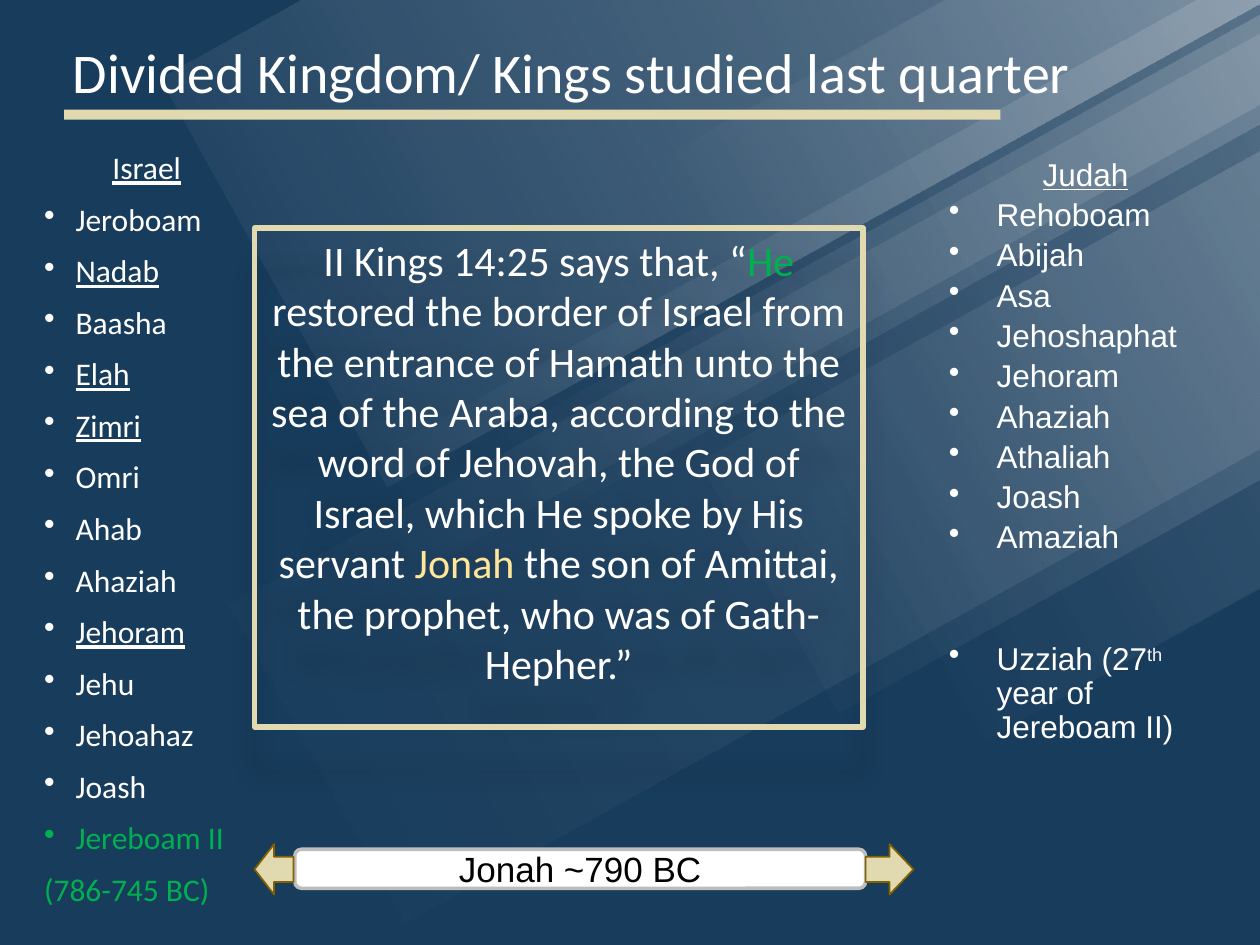
"""Build the Divided Kingdom slide listing the kings of Israel and Judah."""
from dataclasses import dataclass
from typing import Optional

import lxml.etree
import pptx
import pptx.dml.color
import pptx.enum.shapes
import pptx.enum.text
import pptx.oxml.ns
import pptx.util

COLUMNS, ROWS = 100, 75
CELL = pptx.util.Inches(0.1)
WHITE, BLACK, NAVY = "FFFFFF", "000000", "183C5C"
SAND, BRONZE, SILVER = "E1DAB1", "806000", "BDBDBD"
GREEN, YELLOW = "00B050", "FFE699"
SHAPE = pptx.enum.shapes.MSO_SHAPE
ALIGN = pptx.enum.text.PP_ALIGN
ANCHOR = pptx.enum.text.MSO_ANCHOR


@dataclass(frozen=True)
class Area:
    """A rectangle in grid columns and rows."""
    column: float
    row: float
    width: float
    height: float

    def lengths(self) -> list:
        """Return left, top, width and height as slide lengths."""
        cells = (self.column, self.row, self.width, self.height)
        return [round(cell * CELL) for cell in cells]


@dataclass(frozen=True)
class Beam:
    """A slanted ray of light that fades out along its length."""
    area: Area
    opacity: int
    fade_end: float = 1.0


@dataclass(frozen=True)
class Span:
    """A stretch of text with its own marks."""
    text: str
    color: Optional[str] = None
    raised: bool = False


@dataclass(frozen=True)
class Style:
    """Font and spacing shared by the paragraphs of a box."""
    font: str
    size: float
    color: str = WHITE
    align: int = ALIGN.LEFT
    line_spacing: float = 1.0
    space_before: float = 0
    indent: float = 0


@dataclass(frozen=True)
class Entry:
    """A paragraph, with what sets it apart from its box."""
    spans: tuple
    color: Optional[str] = None
    underline: bool = False
    heading: bool = False
    bullet: bool = True
    space_before: Optional[float] = None


BEAMS = (
    Beam(Area(48.2, -54, 37.1, 102.9), 47),
    Beam(Area(62.8, -7, 53, 58.8), 26, 0.77),
    Beam(Area(65.5, -25.6, 9.7, 89.6), 17),
    Beam(Area(55.7, -15.8, 28.8, 102.9), 14),
    Beam(Area(88.8, -19.9, 22.8, 89.6), 26),
    Beam(Area(86.2, -44.7, 7.6, 111.4), 28),
)
ISRAEL = ("Jeroboam", "Nadab", "Baasha", "Elah", "Zimri", "Omri", "Ahab",
          "Ahaziah", "Jehoram", "Jehu", "Jehoahaz", "Joash")
UNDERLINED = {"Nadab", "Elah", "Zimri", "Jehoram"}
JUDAH = ("Rehoboam", "Abijah", "Asa", "Jehoshaphat", "Jehoram", "Ahaziah",
         "Athaliah", "Joash", "Amaziah")
VERSE = (
    Span("II Kings 14:25 says that, “"),
    Span("He", GREEN),
    Span(" restored the border of Israel from the entrance of Hamath unto "
         "the sea of the Araba, according to the word of Jehovah, the God of "
         "Israel, which He spoke by His servant "),
    Span("Jonah", YELLOW),
    Span(" the son of Amittai, the prophet, who was of Gath-Hepher.”"),
)


def rgb(color: str) -> pptx.dml.color.RGBColor:
    """Turn a hex string into a colour."""
    return pptx.dml.color.RGBColor.from_string(color)


def add_element(parent, tag: str, **attributes: str):
    """Append a drawing element to its parent."""
    return lxml.etree.SubElement(parent, pptx.oxml.ns.qn(tag), attributes)


def add_shape(page, kind: int, area: Area, fill: Optional[str] = None,
              line: Optional[str] = None, weight: float = 1, turn: float = 0):
    """Add a preset shape without a shadow."""
    shape = page.shapes.add_shape(kind, *area.lengths())
    shape.rotation = turn
    shape.shadow.inherit = False
    if fill:
        shape.fill.solid()
        shape.fill.fore_color.rgb = rgb(fill)
    else:
        shape.fill.background()
    if line:
        shape.line.color.rgb = rgb(line)
        shape.line.width = pptx.util.Pt(weight)
    else:
        shape.line.fill.background()
    return shape


def add_beam(page, beam: Beam) -> None:
    """Add a ray that fades from its top to its foot."""
    shape = add_shape(page, SHAPE.RECTANGLE, beam.area, turn=61)
    shape.fill.gradient()
    shape.fill.gradient_angle = 270
    stops = shape.fill.gradient_stops
    for stop, position in zip(stops, (0, beam.fade_end)):
        stop.position = position
        stop.color.rgb = rgb(WHITE)
    paints = shape._element.spPr.iter(pptx.oxml.ns.qn("a:srgbClr"))
    for paint, opacity in zip(list(paints), (beam.opacity, 0)):
        add_element(paint, "a:alpha", val=str(opacity * 1000))


def add_soft_shadow(shape) -> None:
    """Cast a faint shadow straight down."""
    effects = shape._element.spPr.find(pptx.oxml.ns.qn("a:effectLst"))
    shadow = add_element(effects, "a:outerShdw", blurRad=str(pptx.util.Pt(12)),
                         dist=str(pptx.util.Pt(25)), dir="5400000")
    paint = add_element(shadow, "a:srgbClr", val=BLACK)
    add_element(paint, "a:alpha", val="15000")


def write(shape, entries: list, style: Style, anchor: int = ANCHOR.TOP,
          insets: tuple = (0.1, 0.05)) -> None:
    """Fill a shape with paragraphs."""
    frame = shape.text_frame
    frame.word_wrap = True
    frame.vertical_anchor = anchor
    frame.margin_left = frame.margin_right = pptx.util.Inches(insets[0])
    frame.margin_top = frame.margin_bottom = pptx.util.Inches(insets[1])
    for index, entry in enumerate(entries):
        para = frame.add_paragraph() if index else frame.paragraphs[0]
        before = entry.space_before
        para.space_before = pptx.util.Pt(style.space_before if before is None else before)
        para.line_spacing = style.line_spacing
        para.alignment = ALIGN.CENTER if entry.heading else style.align
        para.font.name = style.font
        para.font.size = pptx.util.Pt(style.size)
        para.font.color.rgb = rgb(entry.color or style.color)
        para.font.underline = entry.underline or entry.heading
        properties = para._p.get_or_add_pPr()
        if style.indent and (entry.bullet or entry.heading):
            indent = pptx.util.Inches(style.indent)
            properties.set("marL", str(indent))
            properties.set("indent", str(-indent))
        if style.indent and entry.bullet and not entry.heading:
            bullet = lxml.etree.Element(pptx.oxml.ns.qn("a:buChar"), char="•")
            properties.find(pptx.oxml.ns.qn("a:defRPr")).addprevious(bullet)
        for span in entry.spans:
            run = para.add_run()
            run.text = span.text
            if span.color:
                run.font.color.rgb = rgb(span.color)
            if span.raised:
                run.font._element.set("baseline", "30000")


def add_text(page, area: Area, entries: list, style: Style, **layout) -> None:
    """Add a text box and fill it."""
    write(page.shapes.add_textbox(*area.lengths()), entries, style, **layout)


def main() -> None:
    """Build and save the slide."""
    deck = pptx.Presentation()
    deck.slide_width, deck.slide_height = COLUMNS * CELL, ROWS * CELL
    page = deck.slides.add_slide(deck.slide_layouts[6])
    page.background.fill.solid()
    page.background.fill.fore_color.rgb = rgb(NAVY)
    for beam in BEAMS:
        add_beam(page, beam)

    title = Entry((Span("Divided Kingdom/ Kings studied last quarter"),))
    add_text(page, Area(4.8, 2.6, 88.4, 6.2), [title],
             Style("Calibri", 32, line_spacing=0.85), anchor=ANCHOR.BOTTOM)
    add_shape(page, SHAPE.RECTANGLE, Area(5.1, 8.7, 74.3, 0.8), SAND)

    israel = [Entry((Span("Israel"),), heading=True)]
    israel += [Entry((Span(king),), underline=king in UNDERLINED) for king in ISRAEL]
    israel += [Entry((Span("Jereboam II"),), GREEN),
               Entry((Span("(786-745 BC)"),), GREEN, bullet=False)]
    add_text(page, Area(2.8, 11.7, 17.7, 67.1), israel,
             Style("Calibri", 18, line_spacing=0.9, space_before=10, indent=0.25),
             insets=(0.07, 0.04))

    judah = [Entry((Span("Judah"),), heading=True)]
    judah += [Entry((Span(king),)) for king in JUDAH]
    judah.append(Entry((Span("Uzziah (27"), Span("th", raised=True),
                        Span(" year of Jereboam II)")), space_before=50))
    add_text(page, Area(74.6, 12.2, 23.1, 59.5), judah,
             Style("Arial", 18, line_spacing=0.9, space_before=3.6, indent=0.38),
             insets=(0.07, 0.04))

    verse = add_shape(page, SHAPE.RECTANGLE, Area(20.2, 18.1, 48.3, 39.6), line=SAND, weight=3)
    add_soft_shadow(verse)
    write(verse, [Entry(VERSE)], Style("Calibri", 24, align=ALIGN.CENTER))

    label = add_shape(page, SHAPE.ROUNDED_RECTANGLE, Area(23.4, 67.4, 45.3, 3.1),
                      WHITE, SILVER, 2)
    write(label, [Entry((Span("Jonah ~790 BC"),))],
          Style("Arial", 20, BLACK, ALIGN.CENTER), ANCHOR.MIDDLE)
    for column, width, turn in ((20.2, 3.1, 0), (68.7, 3.8, 180)):
        add_shape(page, SHAPE.LEFT_ARROW, Area(column, 67, width, 4), SAND, BRONZE, turn=turn)
    deck.save("out.pptx")


if __name__ == "__main__":
    main()
